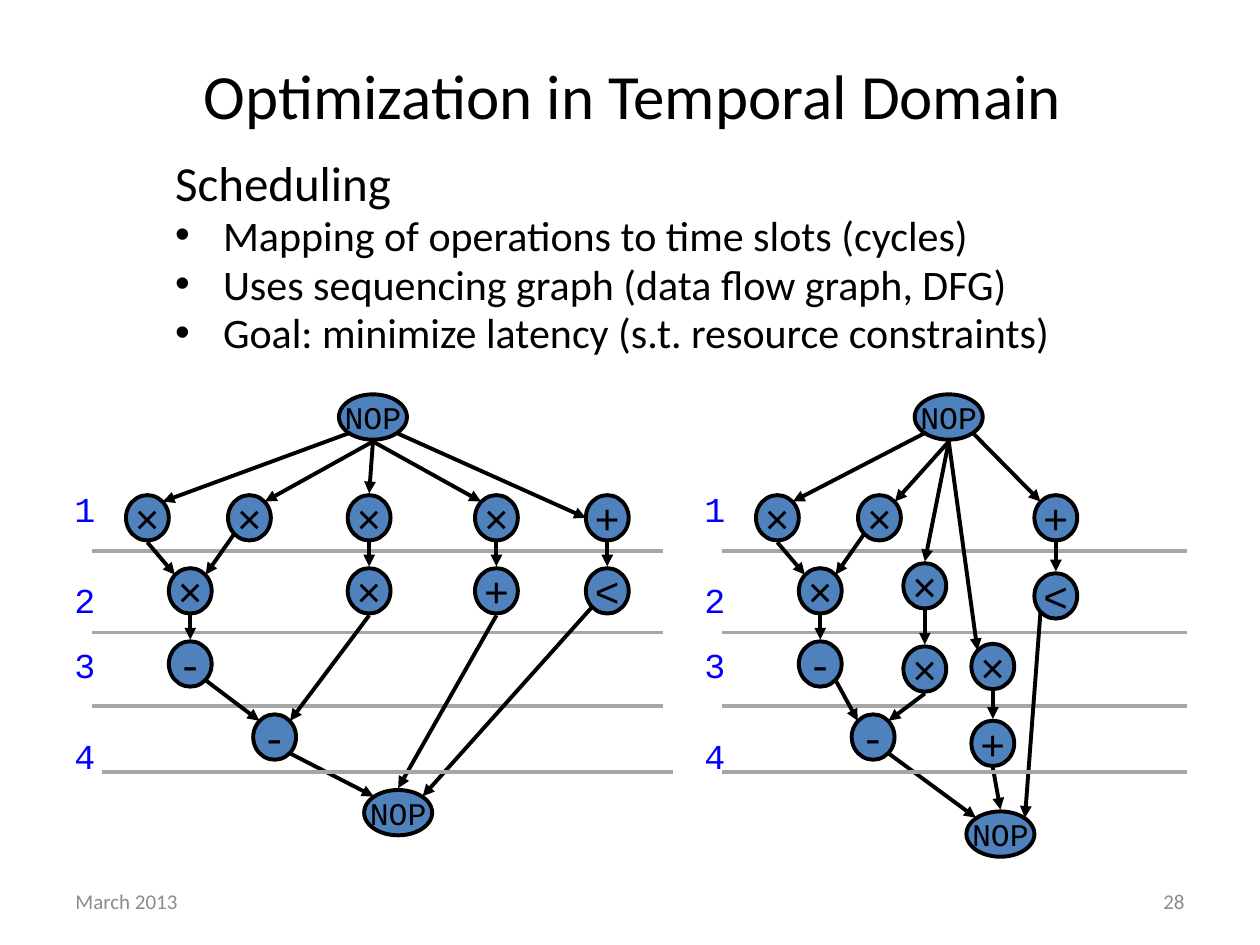
import dataclasses

import pptx
import pptx.dml.color
import pptx.enum.shapes
import pptx.enum.text
import pptx.oxml
import pptx.oxml.ns
import pptx.util
from pptx.util import Inches

ALIGN = pptx.enum.text.PP_ALIGN
ANCHOR = pptx.enum.text.MSO_ANCHOR


@dataclasses.dataclass(frozen=True)
class Theme:
    """Colours, fonts and type sizes of the deck."""
    ink: str = "000000"
    node: str = "4F81BD"
    step: str = "0000FF"
    rule: str = "A6A6A6"
    footer: str = "8C8C8C"
    sans: str = "Calibri"
    mono: str = "Courier New"
    title_size: int = 36
    lead_size: int = 28
    list_size: int = 24
    sign_size: int = 24
    nop_size: int = 18
    step_size: int = 20
    footer_size: int = 12
    stroke: float = 2.25


THEME = Theme()
SIGN_SIZE = (0.34, 0.36)
NOP_SIZE = (0.54, 0.36)
SITES = {"n": (0, -0.54), "s": (0, 0.54), "w": (-0.5, 0),
         "nw": (-0.36, -0.36), "ne": (0.36, -0.36),
         "sw": (-0.36, 0.36), "se": (0.36, 0.36)}
STEP_TOPS = (0.74, 1.46, 1.98, 2.7)
RULE_TOPS = (1.24, 1.89, 2.47, 3)

SHARED_NODES = {
    "mul1": ("×", 0.58, 0.98), "mul2": ("×", 1.39, 0.98),
    "product": ("×", 0.92, 1.56), "minus1": ("-", 0.92, 2.14),
}
SHARED_EDGES = [
    ("start", "sw", "mul1", "ne"), ("start", "s", "mul2", "ne"),
    ("mul1", "s", "product", "nw"), ("mul2", "sw", "product", "ne"),
    ("product", "s", "minus1", "n"), ("minus1", "se", "minus2", "nw"),
    ("mul4", "s", "minus2", "ne"), ("minus2", "se", "end", "nw"),
    ("mul3", "s", "mul4", "n"), ("mul5", "s", "plus2", "n"),
    ("plus1", "s", "less", "n"), ("plus2", "s", "end", "n"),
    ("less", "sw", "end", "ne"),
]
UNCONSTRAINED_NODES = SHARED_NODES | {
    "start": ("NOP", 2.37, 0.18), "mul3": ("×", 2.34, 0.98),
    "mul5": ("×", 3.35, 0.98), "plus1": ("+", 4.23, 0.98),
    "mul4": ("×", 2.34, 1.56), "plus2": ("+", 3.35, 1.56),
    "less": ("<", 4.23, 1.56), "minus2": ("-", 1.59, 2.72),
    "end": ("NOP", 2.57, 3.32),
}
UNCONSTRAINED_EDGES = SHARED_EDGES + [
    ("start", "s", "mul3", "n"), ("start", "s", "mul5", "nw"),
    ("start", "se", "plus1", "w"),
]
CONSTRAINED_NODES = SHARED_NODES | {
    "start": ("NOP", 1.94, 0.18), "plus1": ("+", 2.79, 0.98),
    "mul3": ("×", 1.75, 1.52), "less": ("<", 2.79, 1.6),
    "mul4": ("×", 1.75, 2.18), "mul5": ("×", 2.29, 2.16),
    "plus2": ("+", 2.29, 2.77), "minus2": ("-", 1.34, 2.72),
    "end": ("NOP", 2.35, 3.49),
}
CONSTRAINED_EDGES = SHARED_EDGES + [
    ("start", "s", "mul3", "n"), ("start", "s", "mul5", "nw"),
    ("start", "se", "plus1", "nw"),
]


def rgb(code):
    """Turn a hex code into a colour."""
    return pptx.dml.color.RGBColor.from_string(code)


def place(shape, box):
    """Move a shape to a box given in inches."""
    shape.left, shape.top, shape.width, shape.height = map(Inches, box)


def style(para, font, size, color, align=ALIGN.LEFT):
    """Format a paragraph and its runs."""
    para.alignment = align
    for span in para.runs:
        span.font.name = font
        span.font.size = pptx.util.Pt(size)
        span.font.color.rgb = rgb(color)


def add_label(page, box, text, font, size, color, align=ALIGN.LEFT, tight=False):
    """Add a one-line text box."""
    frame = page.shapes.add_textbox(*map(Inches, box)).text_frame
    frame.text = text
    frame.word_wrap = not tight
    frame.vertical_anchor = ANCHOR.TOP if tight else ANCHOR.MIDDLE
    if tight:
        frame.margin_left = frame.margin_right = 0
        frame.margin_top = frame.margin_bottom = 0
    style(frame.paragraphs[0], font, size, color, align)


def add_line(page, start, end, color, arrow=False):
    """Draw a straight line, with an arrowhead if asked."""
    line = page.shapes.add_connector(
        pptx.enum.shapes.MSO_CONNECTOR.STRAIGHT, *map(Inches, (*start, *end)))
    line.line.color.rgb = rgb(color)
    line.line.width = pptx.util.Pt(THEME.stroke)
    if arrow:
        head = pptx.oxml.parse_xml(
            f'<a:tailEnd {pptx.oxml.ns.nsdecls("a")} type="triangle"/>')
        line.line._get_or_add_ln().append(head)
    line._element.spPr.append(
        pptx.oxml.parse_xml(f'<a:effectLst {pptx.oxml.ns.nsdecls("a")}/>'))


def add_node(page, center, text):
    """Draw an operation node around its centre."""
    width, height = NOP_SIZE if text == "NOP" else SIGN_SIZE
    box = (center[0] - width / 2, center[1] - height / 2, width, height)
    node = page.shapes.add_shape(
        pptx.enum.shapes.MSO_SHAPE.OVAL, *map(Inches, box))
    node.shadow.inherit = False
    node.fill.solid()
    node.fill.fore_color.rgb = rgb(THEME.node)
    node.line.color.rgb = rgb(THEME.ink)
    node.line.width = pptx.util.Pt(THEME.stroke)
    frame = node.text_frame
    frame.text = text
    frame.word_wrap = False
    frame.vertical_anchor = ANCHOR.MIDDLE
    size = THEME.nop_size if text == "NOP" else THEME.sign_size
    style(frame.paragraphs[0], THEME.mono, size, THEME.ink, ALIGN.CENTER)


def add_schedule(page, box, nodes, edges, last_shift=0):
    """Draw a sequencing graph over its numbered time steps."""
    left, top, width, _ = box

    def site(name, side):
        """Find the point where an edge meets a node."""
        text, x, y = nodes[name]
        size = NOP_SIZE if text == "NOP" else SIGN_SIZE
        across, down = SITES[side]
        return left + x + across * size[0], top + y + down * size[1]

    def add_rule(offset, shift=0):
        """Draw the line that closes a time step."""
        start = left + 0.14 + shift
        add_line(page, (start, top + offset),
                 (left + width + shift, top + offset), THEME.rule)

    for text, x, y in nodes.values():
        add_node(page, (left + x, top + y), text)
    for number, offset in enumerate(STEP_TOPS, 1):
        add_label(page, (left, top + offset, 0.18, 0.33), str(number),
                  THEME.mono, THEME.step_size, THEME.step, tight=True)
    for offset in RULE_TOPS[:-1]:
        add_rule(offset)
    for source, leave, target, enter in edges:
        add_line(page, site(source, leave), site(target, enter), THEME.ink, True)
    add_rule(RULE_TOPS[-1], last_shift)


def fill_title(page, box, text):
    """Set the slide title."""
    title = page.shapes.title
    place(title, box)
    frame = title.text_frame
    frame.text = text
    frame.auto_size = pptx.enum.text.MSO_AUTO_SIZE.NONE
    frame.vertical_anchor = ANCHOR.MIDDLE
    style(frame.paragraphs[0], THEME.sans, THEME.title_size, THEME.ink, ALIGN.CENTER)


def fill_body(page, box, lead, points):
    """Set the lead line and its bulleted points."""
    body = page.placeholders[1]
    place(body, box)
    frame = body.text_frame
    frame.text = "\n".join([lead, *points])
    frame.auto_size = pptx.enum.text.MSO_AUTO_SIZE.NONE
    for index, para in enumerate(frame.paragraphs):
        indent = Inches(0.38) if index else 0
        properties = para._p.get_or_add_pPr()
        properties.set("marL", str(indent))
        properties.set("indent", str(-indent))
        bullet = 'buChar {} char="•"' if index else "buNone {}"
        properties.append(pptx.oxml.parse_xml(
            f'<a:{bullet.format(pptx.oxml.ns.nsdecls("a"))}/>'))
        size = THEME.list_size if index else THEME.lead_size
        para.line_spacing = 0.8
        para.space_before = pptx.util.Pt(0.2 * size if index else 0)
        style(para, THEME.sans, size, THEME.ink)


def add_footer(page, box, date, number):
    """Put the date at the left and the page number at the right."""
    left, top, width, height = box
    part = 2.33
    for x, text, align in ((left, date, ALIGN.LEFT),
                           (left + width - part, number, ALIGN.RIGHT)):
        add_label(page, (x, top, part, height), text, THEME.sans,
                  THEME.footer_size, THEME.footer, align)


def main():
    """Build and save the deck."""
    deck = pptx.Presentation()
    deck.slide_width, deck.slide_height = Inches(10), Inches(7.5)
    page = deck.slides.add_slide(deck.slide_layouts[1])
    fill_title(page, (0.52, 0.3, 9, 0.89), "Optimization in Temporal Domain")
    fill_body(page, (1.29, 1.25, 7.7, 1.67), "Scheduling", [
        "Mapping of operations to time slots (cycles)",
        "Uses sequencing graph (data flow graph, DFG)",
        "Goal: minimize latency (s.t. resource constraints)"])
    add_schedule(page, (0.59, 3.13, 4.67, 3.5),
                 UNCONSTRAINED_NODES, UNCONSTRAINED_EDGES, 0.08)
    add_schedule(page, (5.59, 3.13, 3.83, 3.67),
                 CONSTRAINED_NODES, CONSTRAINED_EDGES)
    add_footer(page, (0.5, 6.95, 9, 0.4), "March 2013", "28")
    deck.save("out.pptx")


if __name__ == "__main__":
    main()
